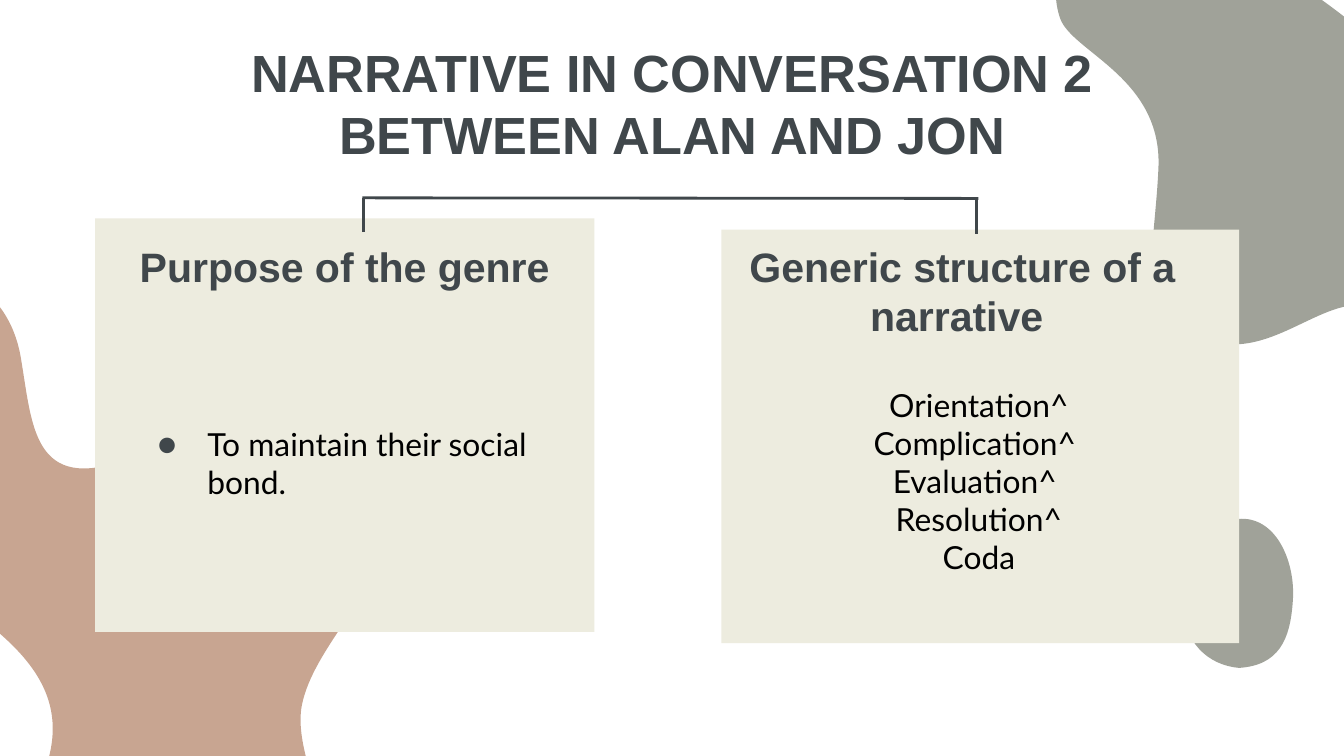
from dataclasses import dataclass
from math import cos, radians, sin

from lxml import etree
from pptx import Presentation
from pptx.dml.color import RGBColor
from pptx.enum.shapes import MSO_CONNECTOR, MSO_SHAPE
from pptx.enum.text import MSO_ANCHOR, PP_ALIGN
from pptx.oxml.ns import qn
from pptx.util import Pt

LEFT, CENTER = PP_ALIGN.LEFT, PP_ALIGN.CENTER
MIDDLE, BOTTOM = MSO_ANCHOR.MIDDLE, MSO_ANCHOR.BOTTOM
RECTANGLE = MSO_SHAPE.RECTANGLE
STRAIGHT = MSO_CONNECTOR.STRAIGHT


@dataclass(frozen=True)
class Theme:
    ink: str = "40474B"
    body_ink: str = "000000"
    card: str = "EDECDF"
    sage: str = "A0A299"
    clay: str = "C8A591"
    heading_font: str = "Arial"
    body_font: str = "Lato"
    title_size: int = 28
    heading_size: int = 22
    body_size: int = 17
    line_width: float = 1.5


THEME = Theme()

# Blob outlines in points on the slide: a start, then two controls and an end
SAGE_CORNER = [
    (568, 10),
    (574.6, 28), (622.8, 41.8), (620.6, 90),
    (618.5, 137.5), (607, 164.2), (643, 180.7),
    (679, 196.6), (707.8, 157), (735, 164.2),
    (761.8, 171.4), (843, 145.4), (786.2, 74.2),
    (730, 3.6), (649.4, -44.6), (607.7, -41),
    (566, -38.2), (561.6, -7.9), (568, 10),
]
CLAY_CORNER = [
    (11.5, 193.7),
    (17.3, 228.2), (18, 264.2), (67.7, 246.2),
    (116.6, 228.2), (187.2, 242.6), (200.9, 275.8),
    (215.3, 308.2), (169.9, 341.3), (162, 376.6),
    (154.1, 411.1), (198.7, 460.1), (151.9, 478.1),
    (105.8, 496.8), (3.6, 464.4), (23.8, 413.3),
    (43.2, 361.4), (-4.3, 335.5), (-45.4, 306),
    (-86.4, 275.8), (-123.1, 189.4), (-73.4, 159.8),
    (-23, 130.3), (6.5, 158.4), (11.5, 193.7),
]
SAGE_PEBBLE = [
    (665.3, 277.9),
    (663.8, 277.9), (661.7, 278.6), (659.5, 278.6),
    (642.2, 283), (633.6, 301.7), (633.6, 322.6),
    (633.6, 344.2), (647.3, 356.4), (663.8, 357.8),
    (684.7, 356.4), (691.2, 343.4), (692.6, 321.8),
    (694.1, 302.4), (684.7, 277.9), (665.3, 277.9),
]


def paint(shape, color):
    shape.shadow.inherit = False
    shape.fill.solid()
    shape.fill.fore_color.rgb = RGBColor.from_string(color)
    shape.line.fill.background()


def turn_back(point, box, angle):
    """Undo a rotation about the box centre; give the place inside the box."""
    left, top, width, height = box
    x, y = point[0] - left - width / 2, point[1] - top - height / 2
    cosine, sine = cos(radians(angle)), sin(radians(angle))
    return (Pt(width / 2 + x * cosine + y * sine),
            Pt(height / 2 - x * sine + y * cosine))


def add_blob(slide, outline, box, color, angle=0):
    points = [turn_back(point, box, angle) for point in outline]
    builder = slide.shapes.build_freeform(*points[0])
    builder.add_line_segments(points[3::3], close=True)
    blob = builder.convert_to_shape()
    blob.left, blob.top, blob.width, blob.height = map(Pt, box)
    blob.rotation = angle
    paint(blob, color)

    # Turn the straight segments into cubic curves
    outline_path = next(blob._element.iter(qn("a:path")))
    outline_path.set("w", str(blob.width))
    outline_path.set("h", str(blob.height))
    for segment in list(outline_path):
        outline_path.remove(segment)
    segments = [("a:moveTo", points[:1])]
    segments += [("a:cubicBezTo", points[i:i + 3]) for i in range(1, len(points), 3)]
    for tag, segment_points in segments:
        segment = etree.SubElement(outline_path, qn(tag))
        for x, y in segment_points:
            etree.SubElement(segment, qn("a:pt"), x=str(int(x)), y=str(int(y)))
    etree.SubElement(outline_path, qn("a:close"))


def add_card(slide, left, top, width, height):
    card = slide.shapes.add_shape(RECTANGLE, Pt(left), Pt(top), Pt(width), Pt(height))
    paint(card, THEME.card)


def add_line(group, start, end):
    line = group.shapes.add_connector(STRAIGHT, *map(Pt, start + end))
    line.line.color.rgb = RGBColor.from_string(THEME.ink)
    line.line.width = Pt(THEME.line_width)
    etree.SubElement(line._element.spPr, qn("a:effectLst"))


def add_bullet(paragraph, color, size, font):
    properties = paragraph._p.get_or_add_pPr()
    properties.set("marL", str(Pt(36)))
    properties.set("indent", str(Pt(-26.6)))
    bullet_color = etree.SubElement(properties, qn("a:buClr"))
    etree.SubElement(bullet_color, qn("a:srgbClr"), val=color)
    etree.SubElement(properties, qn("a:buSzPts"), val=str(size * 100))
    etree.SubElement(properties, qn("a:buFont"), typeface=font)
    etree.SubElement(properties, qn("a:buChar"), char="●")


def add_text(slide, text, box, *, size=THEME.body_size, font=THEME.body_font,
             color=THEME.body_ink, bold=False, align=CENTER, anchor=MIDDLE, bullet=False):
    """Place text in a box; each line of text becomes a paragraph."""
    frame = slide.shapes.add_textbox(*map(Pt, box)).text_frame
    frame.word_wrap = True
    frame.vertical_anchor = anchor
    frame.margin_left = frame.margin_right = Pt(7.2)
    frame.margin_top = frame.margin_bottom = Pt(7.2)
    frame.text = text
    for paragraph in frame.paragraphs:
        paragraph.alignment = align
        for run in paragraph.runs:
            run.font.name = font
            run.font.size = Pt(size)
            run.font.bold = bold
            run.font.color.rgb = RGBColor.from_string(color)
        if bullet:
            add_bullet(paragraph, THEME.ink, size, font)


def main():
    presentation = Presentation()
    presentation.slide_width, presentation.slide_height = Pt(720), Pt(405)
    slide = presentation.slides.add_slide(presentation.slide_layouts[6])

    # Background blobs
    add_blob(slide, SAGE_CORNER, (509, -13, 327.6, 201.6), THEME.sage, angle=222.8)
    add_blob(slide, CLAY_CORNER, (-144.7, 145.4, 368.6, 334.8), THEME.clay, angle=11.2)
    add_blob(slide, SAGE_PEBBLE, (633.6, 277.9, 61.2, 79.9), THEME.sage)

    # Title
    heading = {"font": THEME.heading_font, "color": THEME.ink, "bold": True}
    add_text(slide, "NARRATIVE IN CONVERSATION 2 BETWEEN ALAN AND JON",
             (56.2, 53.3, 607.6, 42.5), size=THEME.title_size, anchor=BOTTOM, **heading)

    # Cards and their headings
    add_card(slide, 51, 117, 267.4, 221.5)
    add_card(slide, 386.5, 123.1, 277.3, 221.5)
    heading["size"] = THEME.heading_size
    add_text(slide, "Purpose of the genre", (56.2, 128.9, 257, 27.4), **heading)
    add_text(slide, "Generic structure of a narrative ",
             (382, 141.8, 267.1, 27.4), **heading)

    # Purpose
    add_text(slide, "To maintain their social bond.", (68, 216, 227.5, 63.4),
             align=LEFT, bullet=True)

    # Bracket joining the cards
    bracket = slide.shapes.add_group_shape()
    add_line(bracket, (194.2, 106), (524.2, 106.3))
    add_line(bracket, (194.8, 124.4), (194.8, 106))
    add_line(bracket, (523.2, 125.3), (523.2, 106.3))

    # Stages of the narrative
    add_text(slide, "Orientation^\nComplication^ \nEvaluation^ \nResolution^\nCoda",
             (410.7, 226, 227.5, 63.4))

    presentation.save("out.pptx")


if __name__ == "__main__":
    main()
